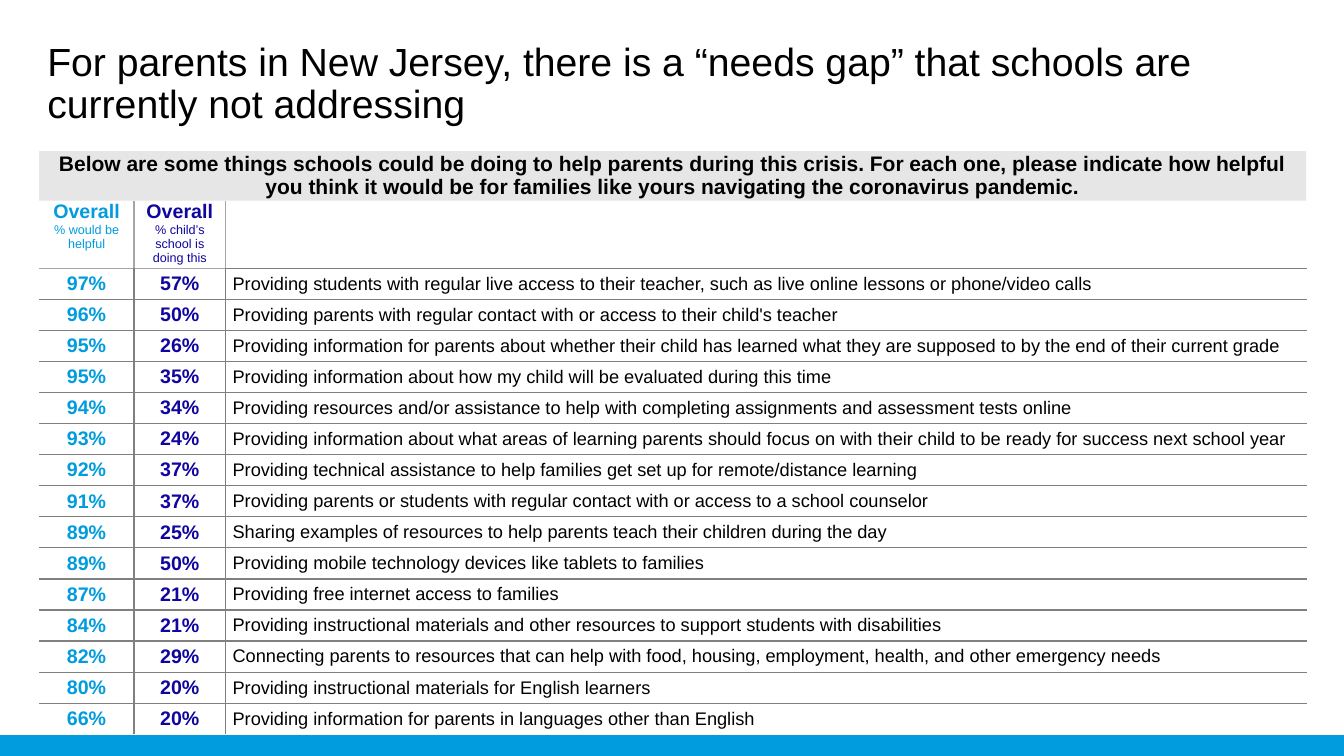
from lxml.etree import SubElement
from pptx import Presentation
from pptx.dml.color import RGBColor
from pptx.enum.shapes import MSO_SHAPE
from pptx.enum.text import MSO_ANCHOR, MSO_AUTO_SIZE, PP_ALIGN
from pptx.oxml.ns import qn
from pptx.util import Pt

BLUE, NAVY, BLACK = "009CDE", "10069F", "000000"
GRAY, LIGHT_GRAY, BANNER_FILL = "808080", "A6A6A6", "E6E6E6"
WIDTH, HEIGHT = 960, 540

TITLE = ("For parents in New Jersey, there is a “needs gap” that schools "
         "are currently not addressing")
QUESTION = ("Below are some things schools could be doing to help parents during this crisis. "
            "For each one, please indicate how helpful you think it would be for families "
            "like yours navigating the coronavirus pandemic.")
HEADINGS = [("Overall", "% would be helpful", BLUE),
            ("Overall", "% child’s school is doing this", NAVY)]
# Share who find it helpful, share whose school does it, kind of help
NEEDS = [
    (97, 57, "Providing students with regular live access to their teacher, such as live online lessons or phone/video calls"),
    (96, 50, "Providing parents with regular contact with or access to their child's teacher"),
    (95, 26, "Providing information for parents about whether their child has learned what they are supposed to by the end of their current grade"),
    (95, 35, "Providing information about how my child will be evaluated during this time"),
    (94, 34, "Providing resources and/or assistance to help with completing assignments and assessment tests online"),
    (93, 24, "Providing information about what areas of learning parents should focus on with their child to be ready for success next school year"),
    (92, 37, "Providing technical assistance to help families get set up for remote/distance learning"),
    (91, 37, "Providing parents or students with regular contact with or access to a school counselor"),
    (89, 25, "Sharing examples of resources to help parents teach their children during the day"),
    (89, 50, "Providing mobile technology devices like tablets to families"),
    (87, 21, "Providing free internet access to families"),
    (84, 21, "Providing instructional materials and other resources to support students with disabilities"),
    (82, 29, "Connecting parents to resources that can help with food, housing, employment, health, and other emergency needs"),
    (80, 20, "Providing instructional materials for English learners"),
    (66, 20, "Providing information for parents in languages other than English"),
]


def color(value):
    return RGBColor.from_string(value)


def add_run(paragraph, text, size, text_color, bold=False):
    run = paragraph.add_run()
    run.text = text
    run.font.name = "Arial"
    run.font.size = Pt(size)
    run.font.bold = bold
    run.font.color.rgb = color(text_color)


def add_bar(slide, left, top, width, height, fill):
    shape = slide.shapes.add_shape(MSO_SHAPE.RECTANGLE, Pt(left), Pt(top), Pt(width), Pt(height))
    shape.shadow.inherit = False
    shape.fill.solid()
    shape.fill.fore_color.rgb = color(fill)
    shape.line.fill.background()
    return shape


def set_borders(cell, **sides):
    """Draw the given sides in their colours and clear the others."""
    properties = cell._tc.get_or_add_tcPr()
    for index, side in enumerate(("left", "right", "top", "bottom")):
        line = properties.makeelement(qn(f"a:ln{side[0].upper()}"), {"w": str(Pt(1))})
        if sides.get(side):
            fill = SubElement(line, qn("a:solidFill"))
            SubElement(fill, qn("a:srgbClr"), val=sides[side])
        else:
            SubElement(line, qn("a:noFill"))
        properties.insert(index, line)


def add_title(slide, left, top, width, height):
    title = slide.shapes.title
    title.left, title.top, title.width, title.height = Pt(left), Pt(top), Pt(width), Pt(height)
    frame = title.text_frame
    frame.word_wrap = True
    frame.auto_size = MSO_AUTO_SIZE.NONE
    frame.vertical_anchor = MSO_ANCHOR.TOP
    paragraph = frame.paragraphs[0]
    paragraph.alignment = PP_ALIGN.LEFT
    paragraph.line_spacing = 0.9
    add_run(paragraph, TITLE, 28, BLACK)


def add_question(slide, left, top, width, height):
    banner = add_bar(slide, left, top, width, height, BANNER_FILL)
    frame = banner.text_frame
    frame.word_wrap = True
    frame.vertical_anchor = MSO_ANCHOR.MIDDLE
    paragraph = frame.paragraphs[0]
    paragraph.alignment = PP_ALIGN.CENTER
    paragraph.line_spacing = 0.9
    paragraph.space_before = Pt(10)
    add_run(paragraph, QUESTION, 15, BLACK, bold=True)


def add_needs_table(slide, left, top, width, height):
    column_widths = [67.7, 65.5, 620.6]
    column_widths.append(width - sum(column_widths))
    header_height = 48.3
    row_height = (height - header_height) / len(NEEDS)
    frame = slide.shapes.add_table(len(NEEDS) + 1, len(column_widths),
                                   Pt(left), Pt(top), Pt(width), Pt(height))
    table = frame.table
    table.first_row = table.horz_banding = False
    for column, column_width in zip(table.columns, column_widths):
        column.width = Pt(column_width)
    for index, row in enumerate(table.rows):
        row.height = Pt(row_height if index else header_height)
    for cell in table.iter_cells():
        cell.fill.background()
        cell.margin_left = cell.margin_right = Pt(5)
        cell.margin_top = cell.margin_bottom = 0

    # Header row
    for index, (heading, note, text_color) in enumerate(HEADINGS):
        frame = table.cell(0, index).text_frame
        add_run(frame.paragraphs[0], heading, 14, text_color, bold=True)
        add_run(frame.add_paragraph(), note, 9, text_color)
        for paragraph in frame.paragraphs:
            paragraph.alignment = PP_ALIGN.CENTER
    for index in range(4):
        set_borders(table.cell(0, index), bottom=GRAY if index == 2 else LIGHT_GRAY,
                    left=LIGHT_GRAY if index in (1, 2) else None,
                    right=LIGHT_GRAY if index < 2 else None)

    # One row for each need
    for row, (helpful, doing, need) in enumerate(NEEDS, start=1):
        table.cell(row, 2).merge(table.cell(row, 3))
        add_run(table.cell(row, 2).text_frame.paragraphs[0], need, 13, BLACK)
        for index, (share, text_color) in enumerate([(helpful, BLUE), (doing, NAVY)]):
            paragraph = table.cell(row, index).text_frame.paragraphs[0]
            paragraph.alignment = PP_ALIGN.CENTER
            add_run(paragraph, f"{share}%", 14, text_color, bold=True)
        for index in range(4):
            cell = table.cell(row, index)
            cell.vertical_anchor = MSO_ANCHOR.MIDDLE
            set_borders(cell, top=LIGHT_GRAY if row == 1 and index != 2 else GRAY,
                        bottom=GRAY if row < len(NEEDS) else None,
                        left=GRAY if index in (1, 2) else None,
                        right=GRAY if index < 2 else None)


def main():
    presentation = Presentation()
    presentation.slide_width, presentation.slide_height = Pt(WIDTH), Pt(HEIGHT)
    slide = presentation.slides.add_slide(presentation.slide_layouts[5])
    add_bar(slide, 0, 525, WIDTH, HEIGHT - 525, BLUE)  # Footer band
    add_needs_table(slide, 28, 143.3, 905.7, 381.5)
    add_question(slide, 28, 108, 905, 35.3)
    add_title(slide, 26.6, 26.6, 905.8, 81.4)
    presentation.save("out.pptx")


if __name__ == "__main__":
    main()
